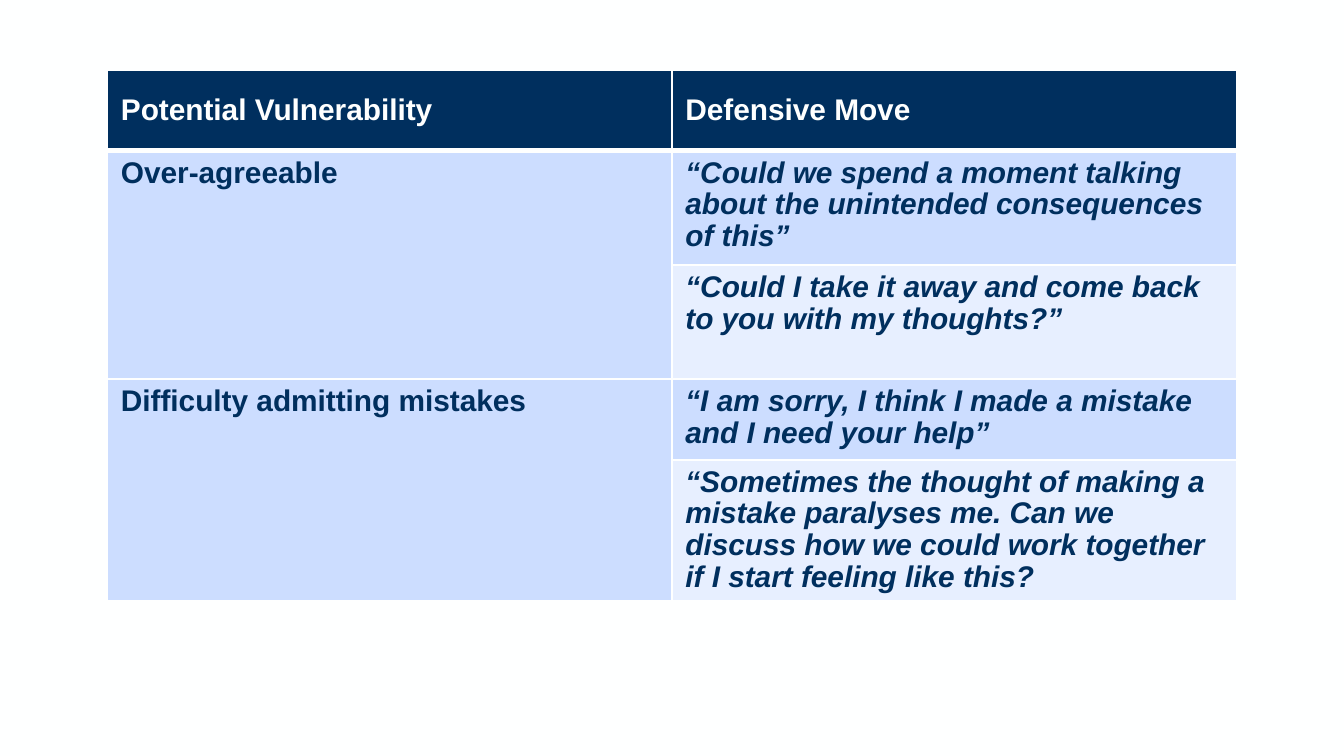
from lxml.etree import SubElement
from pptx import Presentation
from pptx.dml.color import RGBColor
from pptx.enum.text import MSO_ANCHOR
from pptx.oxml.ns import qn
from pptx.util import Pt

NAVY, WHITE, BLUE, PALE = "002F5E", "FEFFFF", "CCDDFF", "E7EFFF"
COLUMN_WIDTH = 302.4
ROW_HEIGHTS = [43.2, 61.2, 61.2, 43.2, 43.2]
HEADINGS = ["Potential Vulnerability", "Defensive Move"]
MOVES = {
    "Over-agreeable": [
        "“Could we spend a moment talking about the unintended consequences of this”",
        "“Could I take it away and come back to you with my thoughts?”",
    ],
    "Difficulty admitting mistakes": [
        "“I am sorry, I think I made a mistake and I need your help”",
        "“Sometimes the thought of making a mistake paralyses me. "
        "Can we discuss how we could work together if I start feeling like this?",
    ],
}


def paint(fill, color):
    """Give a fill one solid colour."""
    fill.solid()
    fill.fore_color.rgb = RGBColor.from_string(color)


def add_borders(cell, top=1, bottom=1):
    """Draw the four white borders of a cell, with widths in points."""
    properties = cell._tc.get_or_add_tcPr()
    for side, width in (("L", 1), ("R", 1), ("T", top), ("B", bottom)):
        border = SubElement(properties, qn(f"a:ln{side}"), w=str(Pt(width)))
        border_fill = SubElement(border, qn("a:solidFill"))
        SubElement(border_fill, qn("a:srgbClr"), val=WHITE)


def write_cell(cell, words, color, italic=False):
    """Write bold text into a cell."""
    paragraph = cell.text_frame.paragraphs[0]
    paragraph.line_spacing = 0.96
    run = paragraph.add_run()
    run.text = words
    run.font.name = "Arial"
    run.font.size = Pt(16)
    run.font.bold = True
    run.font.italic = italic
    run.font.color.rgb = RGBColor.from_string(color)


def style_cells(table):
    """Set the borders and fills of every cell."""
    for row_number, row in enumerate(table.rows):
        for column_number, cell in enumerate(row.cells):
            add_borders(cell, top=3 if row_number == 1 else 1,
                        bottom=3 if row_number == 0 else 1)
            if row_number == 0:
                paint(cell.fill, NAVY)
            else:
                shaded = column_number == 0 or row_number % 2 == 1
                paint(cell.fill, BLUE if shaded else PALE)


def fill_table(table):
    """Write the headings, the vulnerabilities and their defensive moves."""
    for column_number, heading in enumerate(HEADINGS):
        cell = table.cell(0, column_number)
        cell.vertical_anchor = MSO_ANCHOR.MIDDLE
        write_cell(cell, heading, WHITE)
    first_row = 1
    for vulnerability, moves in MOVES.items():
        last_row = first_row + len(moves) - 1
        table.cell(first_row, 0).merge(table.cell(last_row, 0))
        write_cell(table.cell(first_row, 0), vulnerability, NAVY)
        for row_number, move in enumerate(moves, first_row):
            write_cell(table.cell(row_number, 1), move, NAVY, italic=True)
        first_row = last_row + 1


def add_moves_table(slide):
    """Add the table of vulnerabilities and defensive moves."""
    frame = slide.shapes.add_table(
        len(ROW_HEIGHTS), len(HEADINGS), Pt(57.6), Pt(37.6),
        Pt(COLUMN_WIDTH * len(HEADINGS)), Pt(sum(ROW_HEIGHTS)))
    for row, height in zip(frame.table.rows, ROW_HEIGHTS):
        row.height = Pt(height)
    style_cells(frame.table)
    fill_table(frame.table)
    frame.height = Pt(298.8)


def main():
    """Build the slide and save it."""
    presentation = Presentation()
    presentation.slide_width = Pt(720)
    presentation.slide_height = Pt(405)
    slide = presentation.slides.add_slide(presentation.slide_layouts[6])
    paint(slide.background.fill, WHITE)
    add_moves_table(slide)
    presentation.save("out.pptx")


if __name__ == "__main__":
    main()
